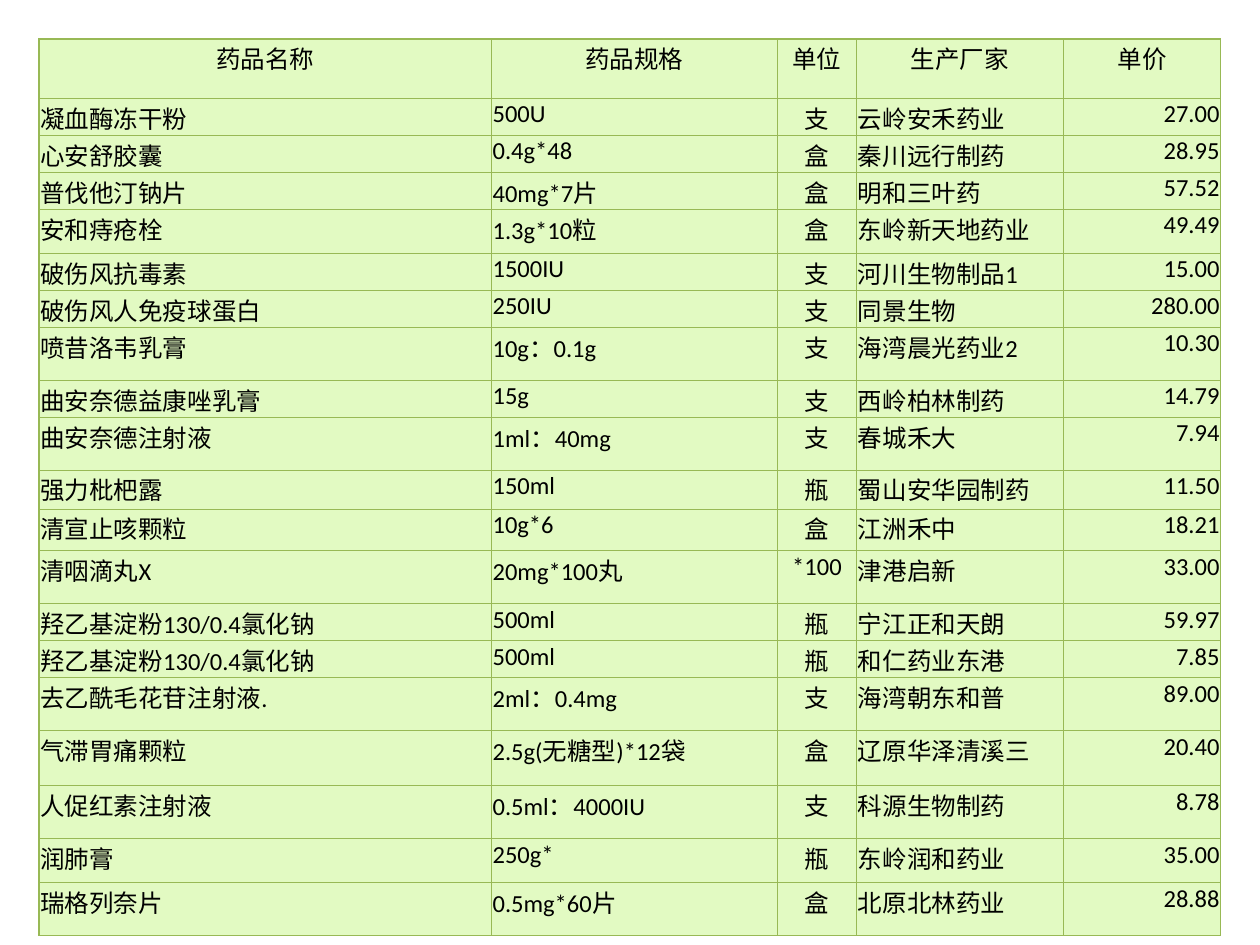
"""Build a one-slide price list of medicines."""
from lxml import etree
from pptx import Presentation
from pptx.dml.color import RGBColor
from pptx.enum.text import PP_ALIGN
from pptx.oxml.ns import qn
from pptx.util import Inches, Pt

LEFT, CENTER, RIGHT = PP_ALIGN.LEFT, PP_ALIGN.CENTER, PP_ALIGN.RIGHT
CELL_FILL = RGBColor(0xE2, 0xFA, 0xC2)
BORDER = RGBColor(0x98, 0xB9, 0x55)
TEXT = RGBColor(0, 0, 0)
FONT = "Calibri"

COLUMNS = [
    ("药品名称", 3.59, LEFT),
    ("药品规格", 2.27, LEFT),
    ("单位", 0.63, CENTER),
    ("生产厂家", 1.64, LEFT),
    ("单价", 1.25, RIGHT),
]
HEADER_HEIGHT = 0.47
MEDICINES = [
    (0.26, "凝血酶冻干粉", "500U", "支", "云岭安禾药业", "27.00"),
    (0.26, "心安舒胶囊", "0.4g*48", "盒", "秦川远行制药", "28.95"),
    (0.26, "普伐他汀钠片", "40mg*7片", "盒", "明和三叶药", "57.52"),
    (0.35, "安和痔疮栓", "1.3g*10粒", "盒", "东岭新天地药业", "49.49"),
    (0.26, "破伤风抗毒素", "1500IU", "支", "河川生物制品1", "15.00"),
    (0.26, "破伤风人免疫球蛋白", "250IU", "支", "同景生物", "280.00"),
    (0.42, "喷昔洛韦乳膏", "10g：0.1g", "支", "海湾晨光药业2", "10.30"),
    (0.26, "曲安奈德益康唑乳膏", "15g", "支", "西岭柏林制药", "14.79"),
    (0.42, "曲安奈德注射液", "1ml：40mg", "支", "春城禾大", "7.94"),
    (0.31, "强力枇杷露", "150ml", "瓶", "蜀山安华园制药", "11.50"),
    (0.33, "清宣止咳颗粒", "10g*6", "盒", "江洲禾中", "18.21"),
    (0.42, "清咽滴丸X", "20mg*100丸", "*100", "津港启新", "33.00"),
    (0.26, "羟乙基淀粉130/0.4氯化钠", "500ml", "瓶", "宁江正和天朗", "59.97"),
    (0.26, "羟乙基淀粉130/0.4氯化钠", "500ml", "瓶", "和仁药业东港", "7.85"),
    (0.42, "去乙酰毛花苷注射液.", "2ml：0.4mg", "支", "海湾朝东和普", "89.00"),
    (0.44, "气滞胃痛颗粒", "2.5g(无糖型)*12袋", "盒", "辽原华泽清溪三", "20.40"),
    (0.42, "人促红素注射液", "0.5ml：4000IU", "支", "科源生物制药", "8.78"),
    (0.35, "润肺膏", "250g*", "瓶", "东岭润和药业", "35.00"),
    (0.42, "瑞格列奈片", "0.5mg*60片", "盒", "北原北林药业", "28.88"),
]


def add_borders(cell):
    properties = cell._tc.get_or_add_tcPr()
    for index, side in enumerate(("a:lnL", "a:lnR", "a:lnT", "a:lnB")):
        line = etree.Element(qn(side), w=str(Pt(0.75)))
        fill = etree.SubElement(line, qn("a:solidFill"))
        etree.SubElement(fill, qn("a:srgbClr"), val=str(BORDER))
        properties.insert(index, line)


def fill_cell(cell, text, alignment):
    cell.margin_left = cell.margin_right = cell.margin_top = Inches(0.01)
    cell.margin_bottom = 0
    cell.fill.solid()
    cell.fill.fore_color.rgb = CELL_FILL
    add_borders(cell)
    cell.text_frame.text = text
    para = cell.text_frame.paragraphs[0]
    para.alignment = alignment
    font = para.runs[0].font
    font.name, font.size, font.color.rgb = FONT, Pt(14), TEXT


def main():
    deck = Presentation()
    deck.slide_width, deck.slide_height = Inches(10), Inches(7.5)
    page = deck.slides.add_slide(deck.slide_layouts[6])

    titles, widths, alignments = zip(*COLUMNS)
    rows = [(HEADER_HEIGHT, *titles), *MEDICINES]
    table = page.shapes.add_table(
        len(rows), len(COLUMNS), Inches(0.31), Inches(0.31),
        Inches(sum(widths)), Inches(sum(row[0] for row in rows)),
    ).table
    for column, width in zip(table.columns, widths):
        column.width = Inches(width)
    for row_index, (height, *values) in enumerate(rows):
        table.rows[row_index].height = Inches(height)
        for column_index, value in enumerate(values):
            alignment = alignments[column_index] if row_index else CENTER
            fill_cell(table.cell(row_index, column_index), value, alignment)
    table.first_row = table.horz_banding = False

    deck.save("out.pptx")


if __name__ == "__main__":
    main()
